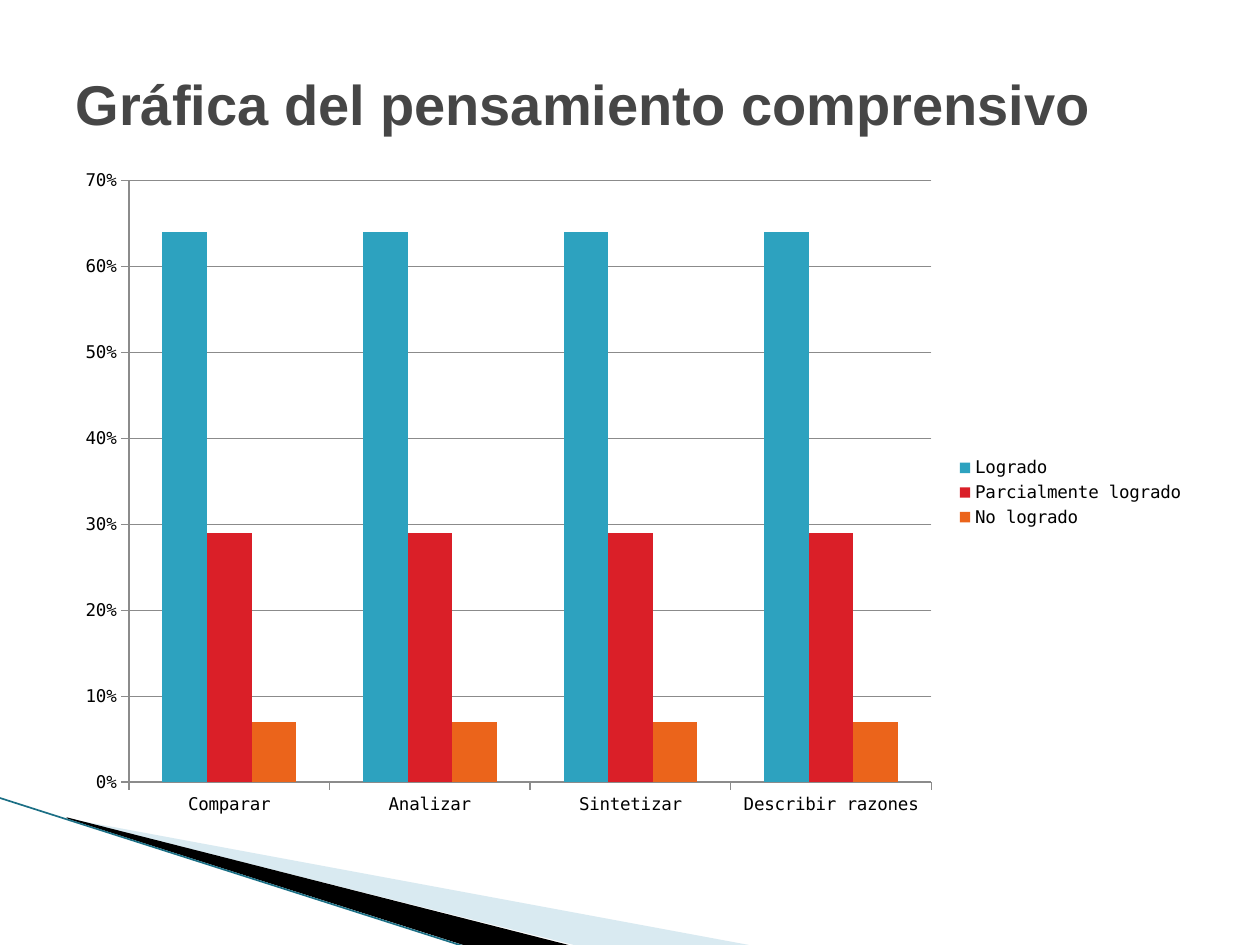
import pptx
import pptx.chart.data
import pptx.dml.color
import pptx.enum.chart
import pptx.enum.shapes
import pptx.enum.text
import pptx.oxml
import pptx.oxml.ns
import pptx.util

Pt = pptx.util.Pt
COLOURS = {
    "title": "464646", "text": "000000", "axis": "8B8B8B",
    "pale_wedge": "A0CBDC", "dark_wedge": "000000", "edge": "1B6F85",
    "Logrado": "2DA2BF", "Parcialmente logrado": "DA1F28", "No logrado": "EB641B",
}
CATEGORIES = ["Comparar", "Analizar", "Sintetizar", "Describir razones"]
SHARES = {"Logrado": 0.64, "Parcialmente logrado": 0.29, "No logrado": 0.07}


def colour(name):
    return pptx.dml.color.RGBColor.from_string(COLOURS[name])


def set_format(target, values):
    for name, value in values.items():
        setattr(target, name, value)


def add_wedge(slide, points, fill, opacity=None):
    """Draw a filled outline through points; opacity is a percentage."""
    builder = slide.shapes.build_freeform(*points[0], scale=Pt(1))
    builder.add_line_segments(points[1:], close=True)
    shape = builder.convert_to_shape()
    shape.shadow.inherit = False
    shape.fill.solid()
    shape.fill.fore_color.rgb = colour(fill)
    shape.line.fill.background()
    if opacity is not None:
        tag = pptx.oxml.ns.qn("a:srgbClr")
        fill_colour = next(shape._element.spPr.iter(tag))
        alpha = pptx.oxml.parse_xml(
            f'<a:alpha {pptx.oxml.ns.nsdecls("a")} val="{opacity * 1000}"/>')
        fill_colour.append(alpha)


def add_edge(slide, start, end):
    connector = slide.shapes.add_connector(
        pptx.enum.shapes.MSO_CONNECTOR.STRAIGHT, *map(Pt, start + end))
    connector.line.color.rgb = colour("edge")
    connector.line.width = Pt(0.95)
    connector._element.spPr.append(pptx.oxml.parse_xml(
        f'<a:effectLst {pptx.oxml.ns.nsdecls("a")}/>'))


def fill_title(slide, text):
    title = slide.shapes.title
    set_format(title, {"left": Pt(36), "top": Pt(21.6),
                       "width": Pt(648), "height": Pt(74.2)})
    title.text_frame.text = text
    title.text_frame.vertical_anchor = pptx.enum.text.MSO_ANCHOR.MIDDLE
    paragraph = title.text_frame.paragraphs[0]
    paragraph.alignment = pptx.enum.text.PP_ALIGN.LEFT
    font = paragraph.runs[0].font
    set_format(font, {"name": "Arial", "size": Pt(32), "bold": True})
    font.color.rgb = colour("title")
    # The title lies in front of the corner decoration.
    slide.shapes._spTree.append(title._element)


def format_axis(axis):
    set_format(axis, {
        "major_tick_mark": pptx.enum.chart.XL_TICK_MARK.OUTSIDE,
        "minor_tick_mark": pptx.enum.chart.XL_TICK_MARK.NONE,
    })
    axis.format.line.color.rgb = colour("axis")


def add_column_chart(slide):
    data = pptx.chart.data.CategoryChartData(number_format="0%")
    data.categories = CATEGORIES
    for name, share in SHARES.items():
        data.add_series(name, [share] * len(CATEGORIES))
    chart = slide.shapes.add_chart(
        pptx.enum.chart.XL_CHART_TYPE.COLUMN_CLUSTERED,
        Pt(36), Pt(90), Pt(648), Pt(383), data).chart
    set_format(chart.font, {"name": "DejaVu Sans Mono", "size": Pt(10)})
    chart.font.color.rgb = colour("text")
    set_format(chart, {"has_title": False, "has_legend": True})
    set_format(chart.legend, {
        "position": pptx.enum.chart.XL_LEGEND_POSITION.RIGHT,
        "include_in_layout": False,
    })

    format_axis(chart.category_axis)
    value_axis = chart.value_axis
    format_axis(value_axis)
    set_format(value_axis, {"minimum_scale": 0, "maximum_scale": 0.7,
                            "major_unit": 0.1, "has_major_gridlines": True})
    value_axis.major_gridlines.format.line.color.rgb = colour("axis")
    set_format(value_axis.tick_labels,
               {"number_format": "0%", "number_format_is_linked": False})

    plot = chart.plots[0]
    set_format(plot, {"gap_width": 150, "overlap": 0, "vary_by_categories": False})
    for series in plot.series:
        series.format.fill.solid()
        series.format.fill.fore_color.rgb = colour(series.name)


def main():
    presentation = pptx.Presentation()
    set_format(presentation, {"slide_width": Pt(720), "slide_height": Pt(540)})
    slide = presentation.slides.add_slide(presentation.slide_layouts[5])
    add_wedge(slide, [(39.6, 468.5), (428.4, 540.5), (328.3, 540.5), (39.6, 468)],
              "pale_wedge", opacity=40)
    add_wedge(slide, [(38.2, 467.3), (329, 540.7), (267.8, 541.4), (38.9, 468)],
              "dark_wedge")
    add_edge(slide, (-0.7, 455.8), (267.1, 541.4))
    fill_title(slide, "Gráfica del pensamiento comprensivo")
    add_column_chart(slide)
    presentation.save("out.pptx")


if __name__ == "__main__":
    main()
